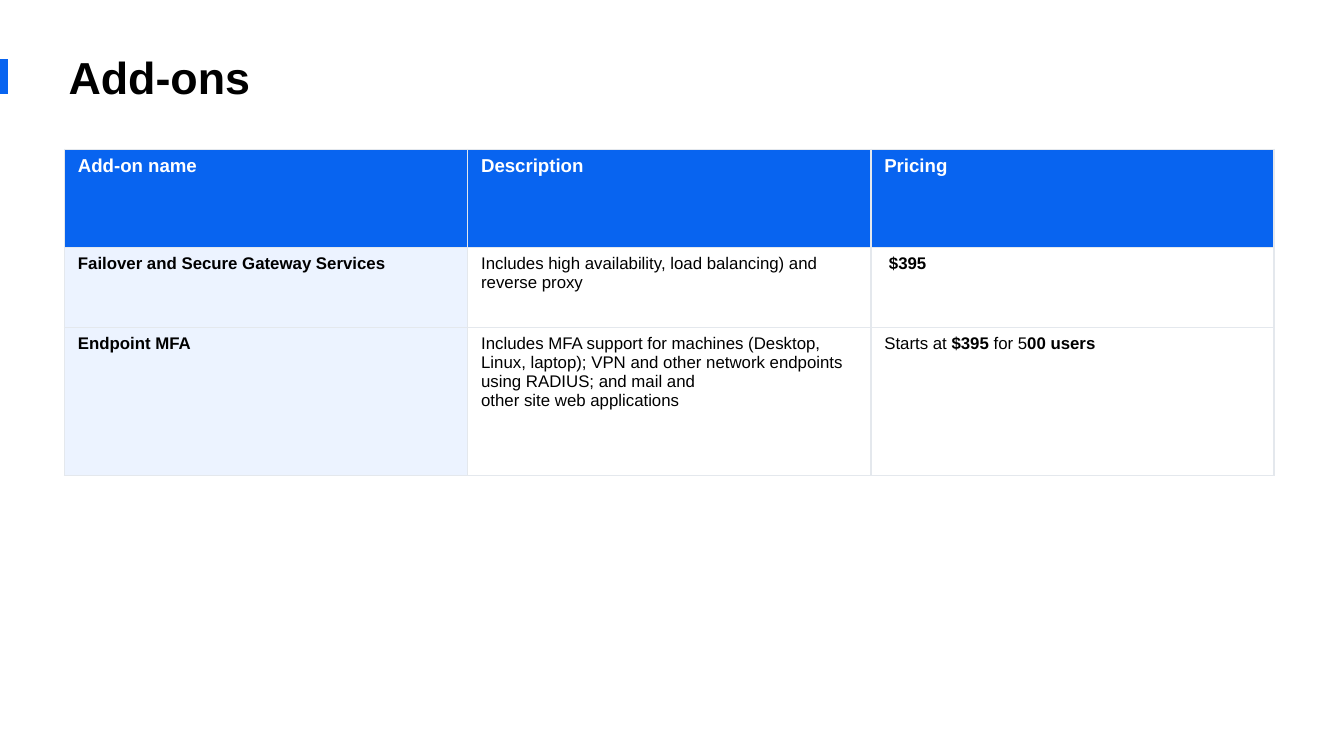
from dataclasses import dataclass

from lxml import etree
from pptx import Presentation
from pptx.dml.color import RGBColor
from pptx.enum.shapes import MSO_SHAPE
from pptx.enum.text import MSO_ANCHOR, PP_ALIGN
from pptx.oxml.ns import qn
from pptx.util import Inches, Pt

RECT = MSO_SHAPE.RECTANGLE
MIDDLE = MSO_ANCHOR.MIDDLE
LEFT = PP_ALIGN.LEFT

FONT = "Arial"
BLUE, PALE, WHITE, BLACK, GRID = "0864F0", "ECF3FF", "FFFFFF", "000000", "E4E8ED"


@dataclass
class Run:
    text: str
    bold: bool = False


@dataclass
class Look:
    fill: str
    color: str = BLACK
    size: float = 9


HEAD, NAME, PLAIN = Look(BLUE, WHITE, 10), Look(PALE), Look(WHITE)

# Each cell is a list of paragraphs, each paragraph a list of runs
ROWS = [
    [[[Run(text, True)]] for text in ("Add-on name", "Description", "Pricing")],
    [
        [[Run("Failover and Secure Gateway Services", True)]],
        [[Run("Includes high availability, load balancing) and reverse proxy")]],
        [[Run(" "), Run("$395", True)]],
    ],
    [
        [[Run("Endpoint MFA", True)]],
        [
            [Run("Includes MFA support for machines (Desktop, Linux, laptop); "
                 "VPN and other network endpoints using RADIUS; and mail and")],
            [Run("other site web applications")],
        ],
        [[Run("Starts at "), Run("$395 ", True), Run("for 5"), Run("00 users", True)]],
    ],
]
HEIGHTS = [0.73, 0.6, 1.1]
WIDTH = 3


def rgb(code: str) -> RGBColor:
    return RGBColor.from_string(code)


def style(font, size: float, color: str) -> None:
    font.name, font.size = FONT, Pt(size)
    font.color.rgb = rgb(color)


def border(cell) -> None:
    props = cell._tc.get_or_add_tcPr()
    for spot, side in enumerate(("a:lnL", "a:lnR", "a:lnT", "a:lnB")):
        line = etree.Element(qn(side), w=str(Pt(0.75)))
        fill = etree.SubElement(line, qn("a:solidFill"))
        etree.SubElement(fill, qn("a:srgbClr"), val=GRID)
        props.insert(spot, line)


def fill_cell(cell, paras: list[list[Run]], look: Look) -> None:
    cell.fill.solid()
    cell.fill.fore_color.rgb = rgb(look.fill)
    border(cell)
    frame = cell.text_frame
    for i, runs in enumerate(paras):
        para = frame.add_paragraph() if i else frame.paragraphs[0]
        style(para.font, look.size, look.color)
        for part in runs:
            run = para.add_run()
            run.text = part.text
            style(run.font, look.size, look.color)
            run.font.bold = part.bold


def add_bar(slide) -> None:
    bar = slide.shapes.add_shape(
        RECT, Inches(-0.01), Inches(0.44), Inches(0.07), Inches(0.26))
    bar.shadow.inherit = False
    bar.fill.solid()
    bar.fill.fore_color.rgb = rgb(BLUE)
    bar.line.fill.background()


def set_title(slide, text: str) -> None:
    title = slide.shapes.title
    title.left, title.top = Inches(0.41), Inches(0.31)
    title.width, title.height = Inches(7.74), Inches(0.52)
    title.text_frame.text = text
    title.text_frame.vertical_anchor = MIDDLE
    para = title.text_frame.paragraphs[0]
    para.alignment = LEFT
    style(para.font, 24, BLACK)
    para.font.bold = True


def add_grid(slide) -> None:
    count = len(ROWS[0])
    table = slide.shapes.add_table(
        len(ROWS), count, Inches(0.48), Inches(1.11),
        Inches(WIDTH * count), Inches(sum(HEIGHTS))).table
    table.horz_banding = False
    for col in table.columns:
        col.width = Inches(WIDTH)
    for r, (cells, height) in enumerate(zip(ROWS, HEIGHTS)):
        table.rows[r].height = Inches(height)
        for c, paras in enumerate(cells):
            look = HEAD if r == 0 else NAME if c == 0 else PLAIN
            fill_cell(table.cell(r, c), paras, look)


def main() -> None:
    deck = Presentation()
    # Widescreen, 16:9
    deck.slide_width = Inches(10)
    deck.slide_height = deck.slide_width * 9 // 16
    # Title Only layout
    slide = deck.slides.add_slide(deck.slide_layouts[5])
    add_bar(slide)
    set_title(slide, "Add-ons")
    add_grid(slide)
    deck.save("out.pptx")


if __name__ == "__main__":
    main()
